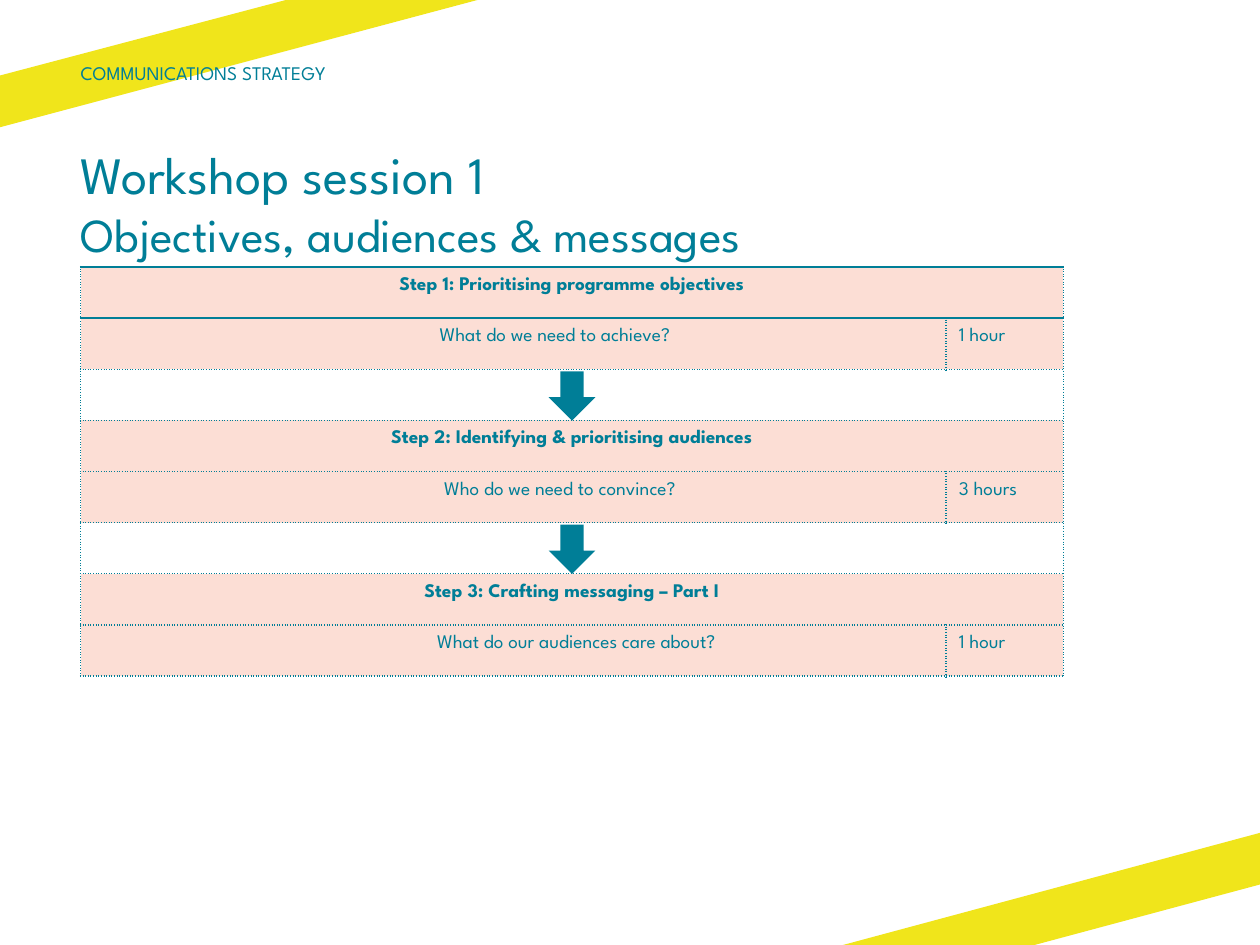
"""Build the workshop session slide: title, three timed steps and corner bands."""
from lxml import etree
from pptx import Presentation
from pptx import util as u
from pptx.dml.color import RGBColor
from pptx.enum import shapes, text
from pptx.oxml import ns

COLORS = {"teal": "007E97", "yellow": "F0E51B", "pink": "FCDED5", "white": "FFFFFF"}

presentation = Presentation()
presentation.slide_width, presentation.slide_height = u.Inches(10), u.Inches(7.5)
slide = presentation.slides.add_slide(presentation.slide_layouts[6])
column, row = presentation.slide_width / 100, presentation.slide_height / 100


def place(left, top, width, height):
    """Turn percentages of the slide into lengths."""
    return [u.Emu(round(share * unit)) for share, unit in
            ((left, column), (top, row), (width, column), (height, row))]


def write(frame, content, sizes=(11,), bold=False, align=text.PP_ALIGN.LEFT,
          anchor=text.MSO_ANCHOR.TOP, margins=(0, 0, 0, 0)):
    """Write lines of text into a frame, one size for each line."""
    frame.word_wrap = True
    frame.vertical_anchor = anchor
    frame.margin_left, frame.margin_top, frame.margin_right, frame.margin_bottom = map(u.Inches, margins)
    paragraph = frame.paragraphs[0]
    paragraph.alignment = align
    for index, (line, size) in enumerate(zip(content.split("\n"), sizes)):
        if index:
            paragraph.add_line_break()
        run = paragraph.add_run()
        run.text = line
        run.font.name, run.font.size, run.font.bold = "League Spartan", u.Pt(size), bold
        run.font.color.rgb = RGBColor.from_string(COLORS["teal"])


bands = [
    [(22.7, 0), (0, 8), (0, 13.47), (37.9, 0)],
    [(66.9, 100), (82.1, 100), (100, 93.6), (100, 88.13)],
]
for band in bands:
    points = [(round(x * column), round(y * row)) for x, y in band]
    builder = slide.shapes.build_freeform(*points[0])
    builder.add_line_segments(points[1:], close=True)
    shape = builder.convert_to_shape()
    shape.shadow.inherit = False
    shape.fill.solid()
    shape.fill.fore_color.rgb = RGBColor.from_string(COLORS["yellow"])
    shape.line.fill.background()

title = slide.shapes.add_textbox(*place(6.4, 15.07, 87.3, 13.6))
write(title.text_frame, "Workshop session 1\nObjectives, audiences & messages", sizes=(30, 27))

LEFT, TOP, WIDTH, ROW_HEIGHT = 6.4, 28.27, 78, 5.41
steps = [
    ("Step 1: Prioritising programme objectives", "What do we need to achieve?", "1 hour", 0.76),
    ("Step 2: Identifying & prioritising audiences", "Who do we need to convince?", "3 hours", 0.84),
    ("Step 3: Crafting messaging – Part I", "What do our audiences care about?", "1 hour", 1.1),
]
row_count = 3 * len(steps) - 1
graphic = slide.shapes.add_table(row_count, 2, *place(LEFT, TOP, WIDTH, ROW_HEIGHT * row_count))
table = graphic.table
table.first_row = table.horz_banding = False
table.columns[0].width, table.columns[1].width = u.Inches(6.87), u.Inches(0.93)

for index in range(row_count):
    for cell in table.rows[index].cells:
        properties = cell._tc.get_or_add_tcPr()
        for side in "LRTB":
            solid = (index, side) in ((0, "T"), (0, "B"), (1, "T"))
            border = etree.SubElement(properties, ns.qn(f"a:ln{side}"), w=str(u.Pt(1.5 if solid else 1)))
            fill = etree.SubElement(border, ns.qn("a:solidFill"))
            etree.SubElement(fill, ns.qn("a:srgbClr"), val=COLORS["teal"])
            etree.SubElement(border, ns.qn("a:prstDash"), val="solid" if solid else "sysDot")
        cell.fill.solid()
        cell.fill.fore_color.rgb = RGBColor.from_string(COLORS["white" if index % 3 == 2 else "pink"])
        cell.margin_top = cell.margin_bottom = 0
    if index % 3 != 1:
        table.cell(index, 0).merge(table.cell(index, 1))

for number, (heading, question, duration, indent) in enumerate(steps):
    entries = [
        (0, 0, heading, True, text.PP_ALIGN.CENTER, 0.1),
        (1, 0, question, False, text.PP_ALIGN.CENTER, indent),
        (1, 1, duration, False, text.PP_ALIGN.LEFT, 0.1),
    ]
    for offset, position, content, bold, align, margin in entries:
        cell = table.cell(3 * number + offset, position)
        write(cell.text_frame, content, bold=bold, align=align)
        cell.margin_left, cell.margin_right = u.Inches(margin), u.Inches(0.1)
        cell.margin_top = cell.margin_bottom = u.Inches(0.08)
        cell.vertical_anchor = text.MSO_ANCHOR.TOP

label = slide.shapes.add_textbox(*place(6.4, 5.73, 45.7, 3.87))
write(label.text_frame, "COMMUNICATIONS STRATEGY", anchor=text.MSO_ANCHOR.MIDDLE)

ARROW_WIDTH, ARROW_HEIGHT = 3.7, 5.2
for index in range(2, row_count, 3):
    arrow = slide.shapes.add_shape(
        shapes.MSO_SHAPE.DOWN_ARROW,
        *place(LEFT + (WIDTH - ARROW_WIDTH) / 2,
               TOP + ROW_HEIGHT * (index + 1) - ARROW_HEIGHT, ARROW_WIDTH, ARROW_HEIGHT))
    arrow.shadow.inherit = False
    arrow.fill.solid()
    arrow.fill.fore_color.rgb = RGBColor.from_string(COLORS["teal"])
    arrow.line.fill.background()

presentation.save("out.pptx")
